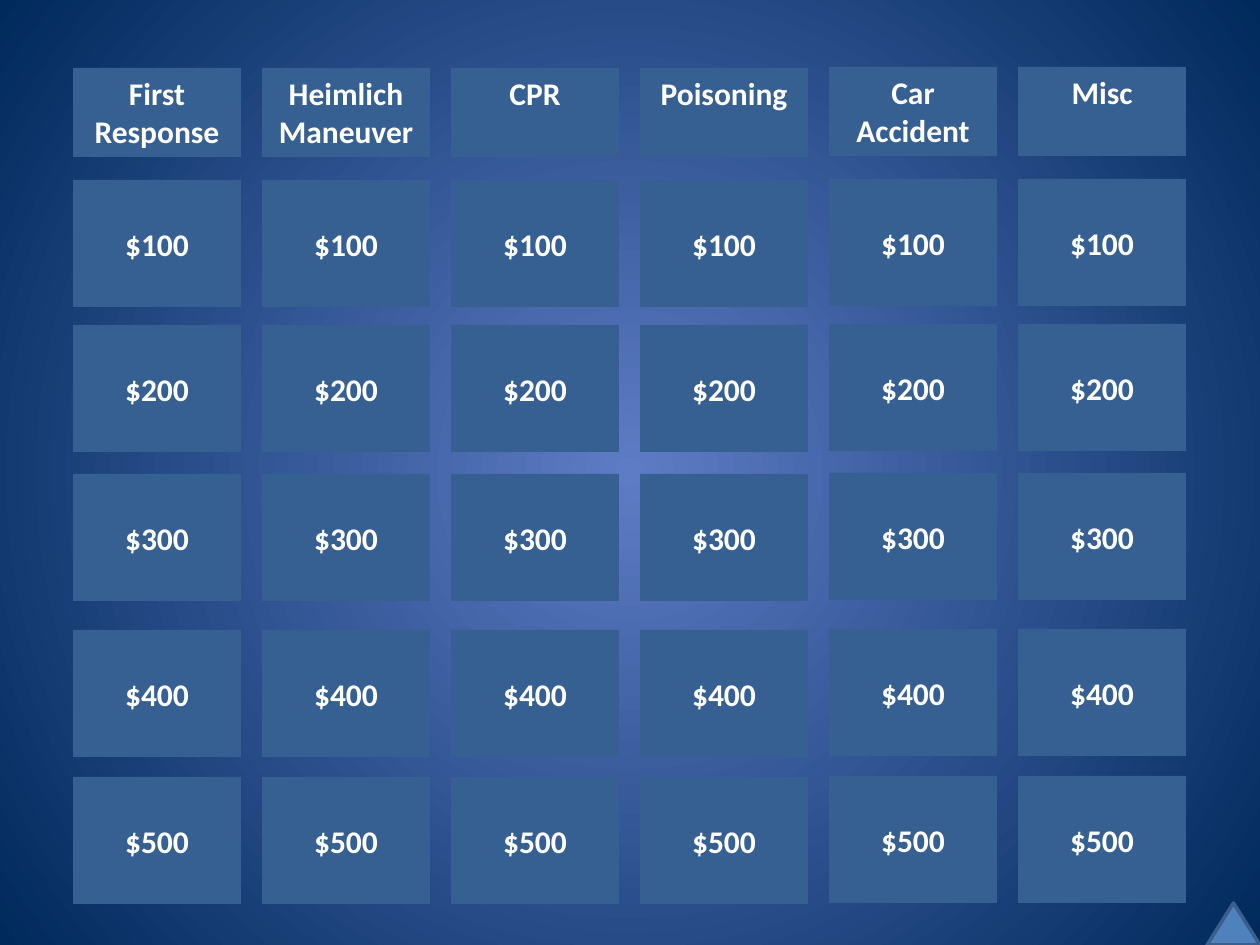
from lxml.etree import SubElement
from pptx import Presentation
from pptx.dml.color import RGBColor
from pptx.enum.shapes import MSO_SHAPE
from pptx.enum.text import MSO_ANCHOR, PP_ALIGN
from pptx.oxml.ns import qn
from pptx.util import Pt

EMU_PER_PX = 914400 / 126
GLOW = RGBColor(0x5E, 0x7C, 0xC5)
NAVY = RGBColor(0x00, 0x29, 0x5C)
TILE = RGBColor(0x37, 0x60, 0x92)
WHITE = RGBColor(0xFF, 0xFF, 0xFF)
MARKER = RGBColor(0x4F, 0x81, 0xBD)
MARKER_EDGE = RGBColor(0x3A, 0x5F, 0x8C)

CATEGORIES = ["First\vResponse", "Heimlich\vManeuver", "CPR", "Poisoning",
              "Car\vAccident", "Misc"]
AMOUNT_TOPS = {"$100": 112, "$200": 257, "$300": 406, "$400": 562, "$500": 709}
COLUMN_PITCH = 189
TILE_WIDTH = 168
HEADER_HEIGHT = 89
AMOUNT_HEIGHT = 127
RAISED_FROM = 4


def px(length):
    return round(length * EMU_PER_PX)


def paint_background(slide):
    fill = slide.background.fill
    fill.gradient()
    for stop, color in zip(fill.gradient_stops, (GLOW, NAVY)):
        stop.color.rgb = color
    gradient = next(slide.element.iter(qn("a:gradFill")))
    gradient.remove(gradient.find(qn("a:lin")))
    circle = SubElement(gradient, qn("a:path"), path="circle")
    SubElement(circle, qn("a:fillToRect"), l="50000", t="50000", r="50000", b="50000")


def add_figure(slide, preset, left, top, width, height, color):
    figure = slide.shapes.add_shape(preset, px(left), px(top), px(width), px(height))
    figure.shadow.inherit = False
    figure.fill.solid()
    figure.fill.fore_color.rgb = color
    return figure


def add_tile(slide, left, top, height, wording, anchor):
    tile = add_figure(slide, MSO_SHAPE.RECTANGLE, left, top, TILE_WIDTH, height, TILE)
    tile.line.fill.background()
    frame = tile.text_frame
    frame.word_wrap = True
    frame.vertical_anchor = anchor
    label = frame.paragraphs[0]
    label.text = wording
    label.alignment = PP_ALIGN.CENTER
    label.font.name = "Calibri"
    label.font.size = Pt(18)
    label.font.bold = True
    label.font.color.rgb = WHITE


def add_board(slide, left, top):
    for column, category in enumerate(CATEGORIES):
        tile_left = left + column * COLUMN_PITCH
        column_top = top - 1 if column >= RAISED_FROM else top
        add_tile(slide, tile_left, column_top, HEADER_HEIGHT, category, MSO_ANCHOR.TOP)
        for amount, offset in AMOUNT_TOPS.items():
            add_tile(slide, tile_left, column_top + offset, AMOUNT_HEIGHT, amount,
                     MSO_ANCHOR.MIDDLE)


def add_marker(slide, left, top, width, height):
    marker = add_figure(slide, MSO_SHAPE.ISOSCELES_TRIANGLE, left, top, width, height,
                        MARKER)
    marker.line.color.rgb = MARKER_EDGE
    marker.line.width = Pt(2)


def main():
    deck = Presentation()
    deck.slide_width = px(1260)
    deck.slide_height = px(945)
    slide = deck.slides.add_slide(deck.slide_layouts[6])
    paint_background(slide)
    add_board(slide, 73, 68)
    add_marker(slide, 1207, 903, 53, 42)
    deck.save("out.pptx")


if __name__ == "__main__":
    main()
